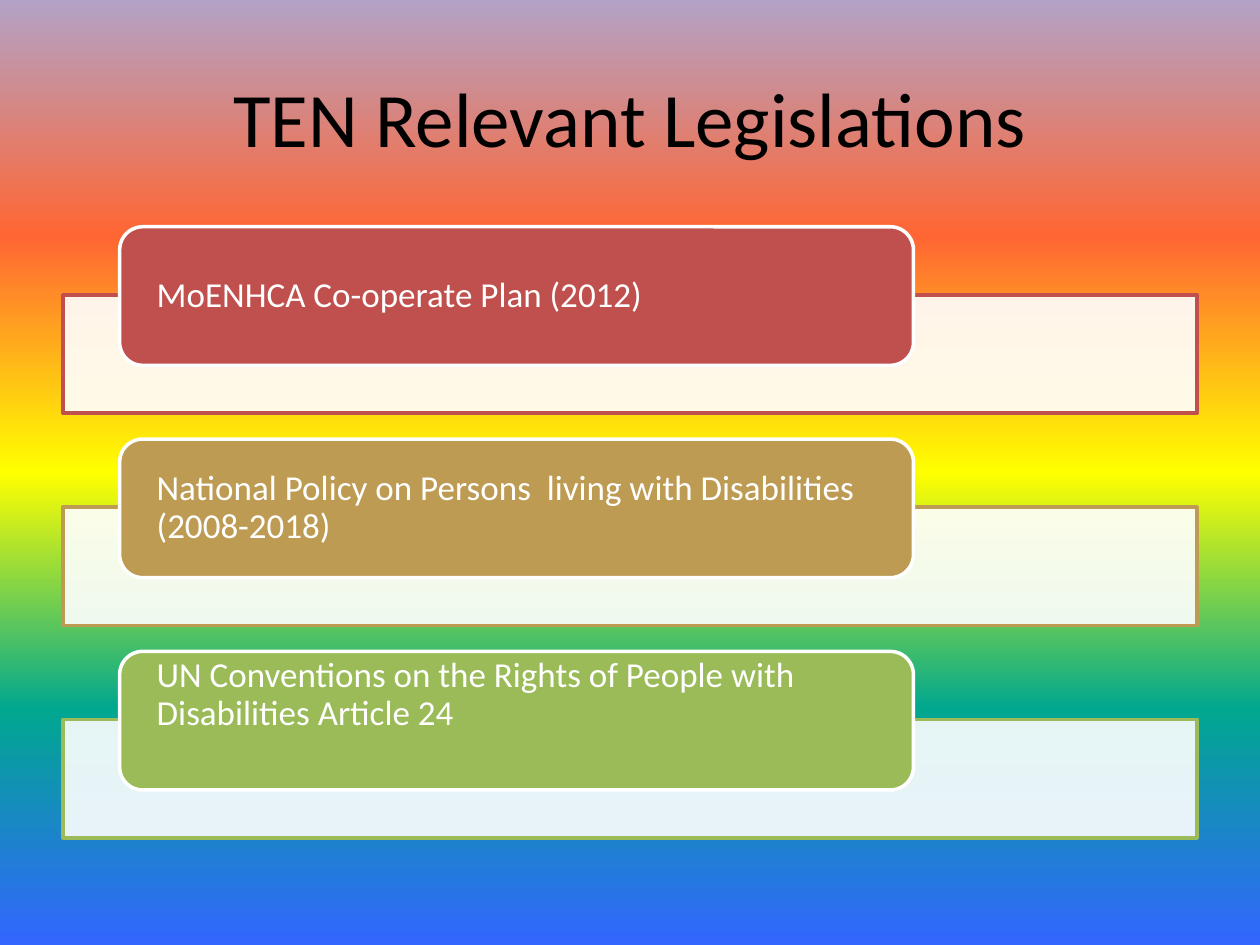
from copy import deepcopy

from pptx import Presentation
from pptx.dml.color import RGBColor
from pptx.enum.shapes import MSO_SHAPE as Shape
from pptx.enum.text import MSO_ANCHOR as Anchor, PP_ALIGN as Align
from pptx.oxml import parse_xml
from pptx.oxml.ns import nsdecls, qn
from pptx.util import Inches, Pt

HEADING = "TEN Relevant Legislations"
LEGISLATIONS = [
    ("MoENHCA Co-operate Plan (2012)", "C0504D", 0),
    ("National Policy on Persons  living with Disabilities (2008-2018)", "BD9B53", 0),
    ("UN Conventions on the Rights of People with Disabilities Article 24", "9BBB59", 0.4),
]
RAINBOW = ["B3A2C7", "FF6633", "FFFF00", "01A78F", "3366FF"]
WHITE, BLACK = "FFFFFF", "000000"

WIDTH, HEIGHT = 10, 7.5
MARGIN = WIDTH * 0.05
BAND_WIDTH, BAND_HEIGHT = WIDTH - 2 * MARGIN, 0.94
LABEL_WIDTH, LABEL_HEIGHT = BAND_WIDTH * 0.7, 1.1
LABEL_LEFT = MARGIN + BAND_WIDTH * 0.05
FIRST_ROW, ROW_PITCH = 1.8, 1.685
BAND_DROP = LABEL_HEIGHT / 2 - 0.01


def colour(value):
    return RGBColor.from_string(value)


def apply(target, **values):
    for key, value in values.items():
        setattr(target, key, value)


def write(frame, words, size, ink, align, **layout):
    apply(frame, text=words, word_wrap=True, vertical_anchor=Anchor.MIDDLE, **layout)
    paragraph = frame.paragraphs[0]
    paragraph.alignment = align
    apply(paragraph.runs[0].font, name="Calibri", size=Pt(size))
    paragraph.runs[0].font.color.rgb = colour(ink)
    return paragraph


def add_panel(slide, kind, box, fill, line):
    panel = slide.shapes.add_shape(kind, *map(Inches, box))
    panel.shadow.inherit = False
    panel.fill.solid()
    panel.fill.fore_color.rgb = colour(fill)
    panel.line.color.rgb = colour(line)
    panel.line.width = Pt(2)
    return panel


def paint_background(slide):
    fill = slide.background.fill
    fill.gradient()
    fill.gradient_angle = 270
    stops = slide.element.find(".//" + qn("a:gsLst"))
    for stop in list(stops):
        stops.remove(stop)
    for index, shade in enumerate(RAINBOW):
        position = index * 100000 // (len(RAINBOW) - 1)
        stops.append(parse_xml(
            f'<a:gs {nsdecls("a")} pos="{position}"><a:srgbClr val="{shade}"/></a:gs>'))


def add_legislation(slide, row, words, accent, bottom_inset):
    top = FIRST_ROW + row * ROW_PITCH
    band = add_panel(slide, Shape.RECTANGLE,
                     (MARGIN, top + BAND_DROP, BAND_WIDTH, BAND_HEIGHT), WHITE, accent)
    tint = band.element.spPr.find(qn("a:solidFill"))[0]
    tint.append(parse_xml(f'<a:alpha {nsdecls("a")} val="90000"/>'))
    label = add_panel(slide, Shape.ROUNDED_RECTANGLE,
                      (LABEL_LEFT, top, LABEL_WIDTH, LABEL_HEIGHT), accent, WHITE)
    paragraph = write(label.text_frame, words, 20, WHITE, Align.LEFT,
                      margin_left=Inches(0.24), margin_right=Inches(0.24),
                      margin_top=0, margin_bottom=Inches(bottom_inset))
    paragraph.line_spacing = 0.9


def main():
    deck = Presentation()
    apply(deck, slide_width=Inches(WIDTH), slide_height=Inches(HEIGHT))
    slide = deck.slides.add_slide(deck.slide_layouts[5])
    paint_background(slide)
    title = slide.shapes.title
    apply(title, left=Inches(MARGIN), top=Inches(HEIGHT * 0.04),
          width=Inches(BAND_WIDTH), height=Inches(1.25))
    write(title.text_frame, HEADING, 44, BLACK, Align.CENTER)
    for row, legislation in enumerate(LEGISLATIONS):
        add_legislation(slide, row, *legislation)
    deck.save("out.pptx")


if __name__ == "__main__":
    main()
